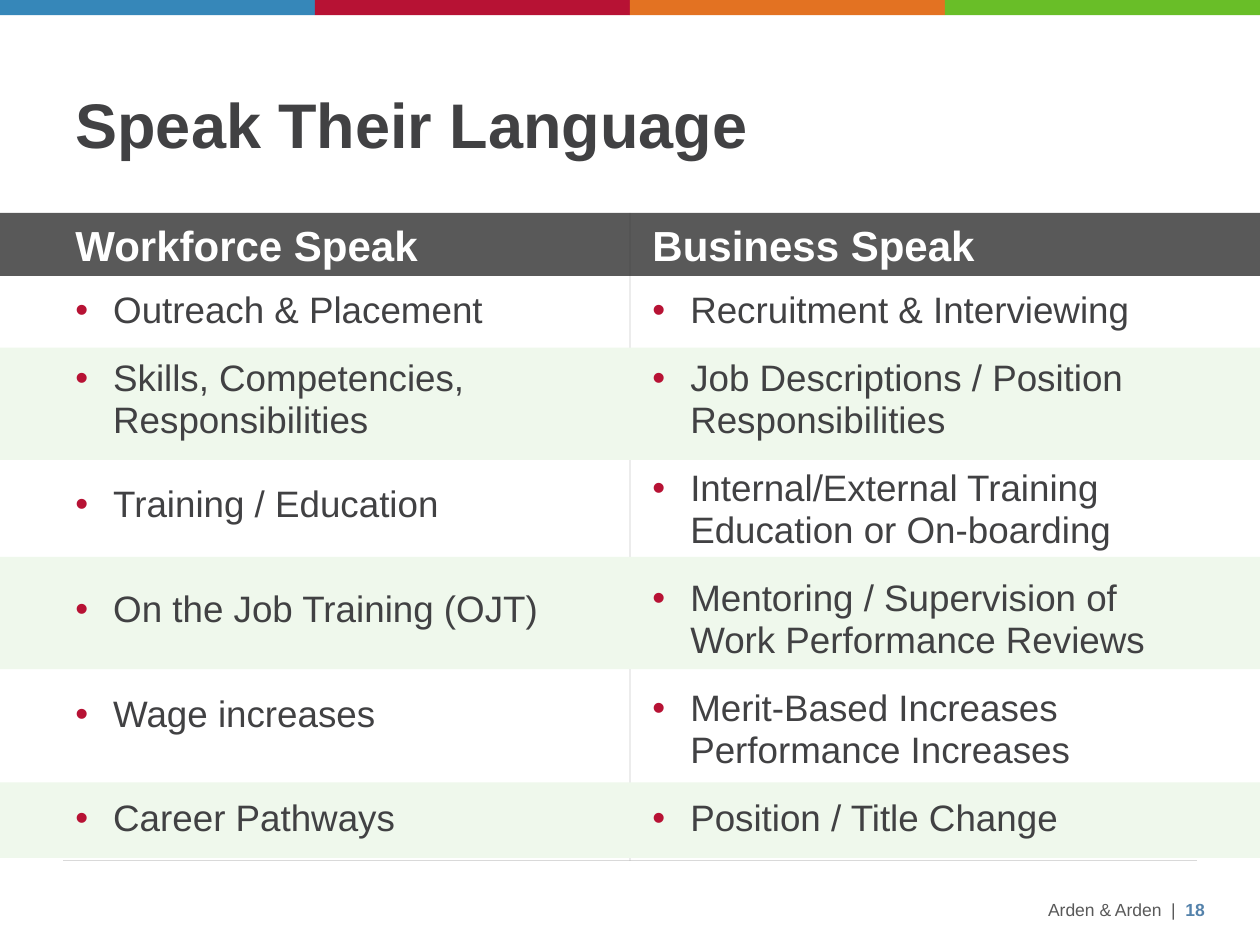
from dataclasses import dataclass

from lxml.etree import SubElement
from pptx import Presentation
from pptx.dml.color import RGBColor
from pptx.enum.shapes import MSO_CONNECTOR as Connector, MSO_SHAPE as Shape
from pptx.enum.text import MSO_ANCHOR as Anchor, PP_ALIGN as Align
from pptx.oxml.ns import qn
from pptx.util import Inches, Pt

WIDTH, HEIGHT = 10, 7.5
MARGIN = 0.5
COLUMNS = (MARGIN, 5.08)
COLUMN_WIDTH = 4.42
TABLE_TOP, TABLE_BOTTOM = 1.69, 6.83


@dataclass(frozen=True)
class Theme:
    font: str = "Arial"
    text: str = "414143"
    white: str = "FFFFFF"
    header: str = "595959"
    band: str = "EFF8EC"
    rule: str = "D9D9D9"
    divider: str = "202021"
    bullet: str = "B71234"
    number: str = "5482AB"
    stripes: tuple = ("3687B9", "B71234", "E37222", "69BE28")
    title_size: int = 36
    header_size: int = 24
    body_size: int = 21
    footer_size: int = 10


class SlideBuilder:
    def __init__(self, presentation, theme):
        self.theme = theme
        self.slide = presentation.slides.add_slide(presentation.slide_layouts[5])

    def format_run(self, run, size, color, bold=False):
        run.font.name = self.theme.font
        run.font.size = Pt(size)
        run.font.bold = bold
        run.font.color.rgb = RGBColor.from_string(color)

    def title(self, text, left, top, width, height):
        shape = self.slide.shapes.title
        shape.left, shape.top = Inches(left), Inches(top)
        shape.width, shape.height = Inches(width), Inches(height)
        frame = shape.text_frame
        frame.text = text
        frame.vertical_anchor = Anchor.MIDDLE
        paragraph = frame.paragraphs[0]
        paragraph.alignment = Align.LEFT
        paragraph.line_spacing = 0.9
        self.format_run(paragraph.runs[0], self.theme.title_size, self.theme.text, True)

    def bar(self, left, top, width, height, color):
        shape = self.slide.shapes.add_shape(
            Shape.RECTANGLE, Inches(left), Inches(top), Inches(width), Inches(height))
        shape.shadow.inherit = False
        shape.fill.solid()
        shape.fill.fore_color.rgb = RGBColor.from_string(color)
        shape.line.fill.background()

    def line(self, start, end, color, opacity=100):
        connector = self.slide.shapes.add_connector(
            Connector.STRAIGHT, *(Inches(value) for value in (*start, *end)))
        connector.line.width = Pt(0.75)
        connector.line.color.rgb = RGBColor.from_string(color)
        properties = connector._element.spPr
        if opacity < 100:
            fill_color = next(properties.iter(qn("a:srgbClr")))
            SubElement(fill_color, qn("a:alpha"), val=str(opacity * 1000))
        SubElement(properties, qn("a:effectLst"))

    def text_box(self, left, top, width, height, anchor=Anchor.TOP):
        box = self.slide.shapes.add_textbox(
            Inches(left), Inches(top), Inches(width), Inches(height))
        box.text_frame.word_wrap = True
        box.text_frame.vertical_anchor = anchor
        return box.text_frame

    def heading(self, text, left):
        frame = self.text_box(left, 1.72, COLUMN_WIDTH, 0.45)
        frame.text = text
        paragraph = frame.paragraphs[0]
        paragraph.line_spacing = 0.95
        self.format_run(paragraph.runs[0], self.theme.header_size, self.theme.white, True)

    def bullets(self, items, left):
        frame = self.text_box(left, 2.25, COLUMN_WIDTH, 4.45)
        for index, (text, space) in enumerate(items):
            paragraph = frame.add_paragraph() if index else frame.paragraphs[0]
            paragraph.text = text
            paragraph.line_spacing = 0.95
            paragraph.space_before = Pt(space)
            for run in paragraph.runs:
                self.format_run(run, self.theme.body_size, self.theme.text)
            properties = paragraph._p.get_or_add_pPr()
            properties.set("marL", str(Inches(0.3)))
            properties.set("indent", str(Inches(-0.3)))
            bullet_color = SubElement(properties, qn("a:buClr"))
            SubElement(bullet_color, qn("a:srgbClr"), val=self.theme.bullet)
            SubElement(properties, qn("a:buFont"), typeface=self.theme.font)
            SubElement(properties, qn("a:buChar"), char="•")

    def footer(self, label, number):
        frame = self.text_box(6.08, 6.91, 3.58, 0.44, Anchor.BOTTOM)
        paragraph = frame.paragraphs[0]
        paragraph.alignment = Align.RIGHT
        for text, color, bold in ((label, self.theme.header, False),
                                  (number, self.theme.number, True)):
            run = paragraph.add_run()
            run.text = text
            self.format_run(run, self.theme.footer_size, color, bold)


def main():
    presentation = Presentation()
    presentation.slide_width, presentation.slide_height = Inches(WIDTH), Inches(HEIGHT)
    theme = Theme()
    builder = SlideBuilder(presentation, theme)

    # Coloured stripes along the top edge
    stripe_width = WIDTH / len(theme.stripes)
    for index, color in enumerate(theme.stripes):
        builder.bar(index * stripe_width, 0, stripe_width, 0.12, color)

    # Footer
    builder.footer("Arden & Arden  |  ", "18")
    builder.line((MARGIN, TABLE_BOTTOM), (WIDTH - MARGIN, TABLE_BOTTOM), theme.rule)

    # Header bar, column divider and row bands
    builder.bar(0, TABLE_TOP, WIDTH, 0.5, theme.header)
    builder.line((WIDTH / 2, TABLE_TOP), (WIDTH / 2, TABLE_BOTTOM), theme.divider, 13)
    for top, height in ((2.76, 0.89), (4.42, 0.89), (6.21, 0.6)):
        builder.bar(0, top, WIDTH, height, theme.band)

    # Title
    builder.title("Speak Their Language", MARGIN, 0.39, WIDTH - 2 * MARGIN, 1.25)

    # Two columns of terms, each with its space before in points
    workforce = (
        ("Outreach & Placement", 0),
        ("Skills, Competencies, Responsibilities", 15),
        ("Training / Education", 24),
        ("On the Job Training (OJT)", 36),
        ("Wage increases", 36),
        ("Career Pathways", 36),
    )
    business = (
        ("Recruitment & Interviewing", 0),
        ("Job Descriptions / Position Responsibilities", 15),
        ("Internal/External Training\vEducation or On-boarding", 15),
        ("Mentoring / Supervision of Work Performance Reviews", 15),
        ("Merit-Based Increases\vPerformance Increases", 15),
        ("Position / Title Change", 15),
    )
    contents = (("Workforce Speak", workforce), ("Business Speak", business))
    for left, (heading, items) in zip(COLUMNS, contents):
        builder.heading(heading, left)
        builder.bullets(items, left)

    presentation.save("out.pptx")


if __name__ == "__main__":
    main()
